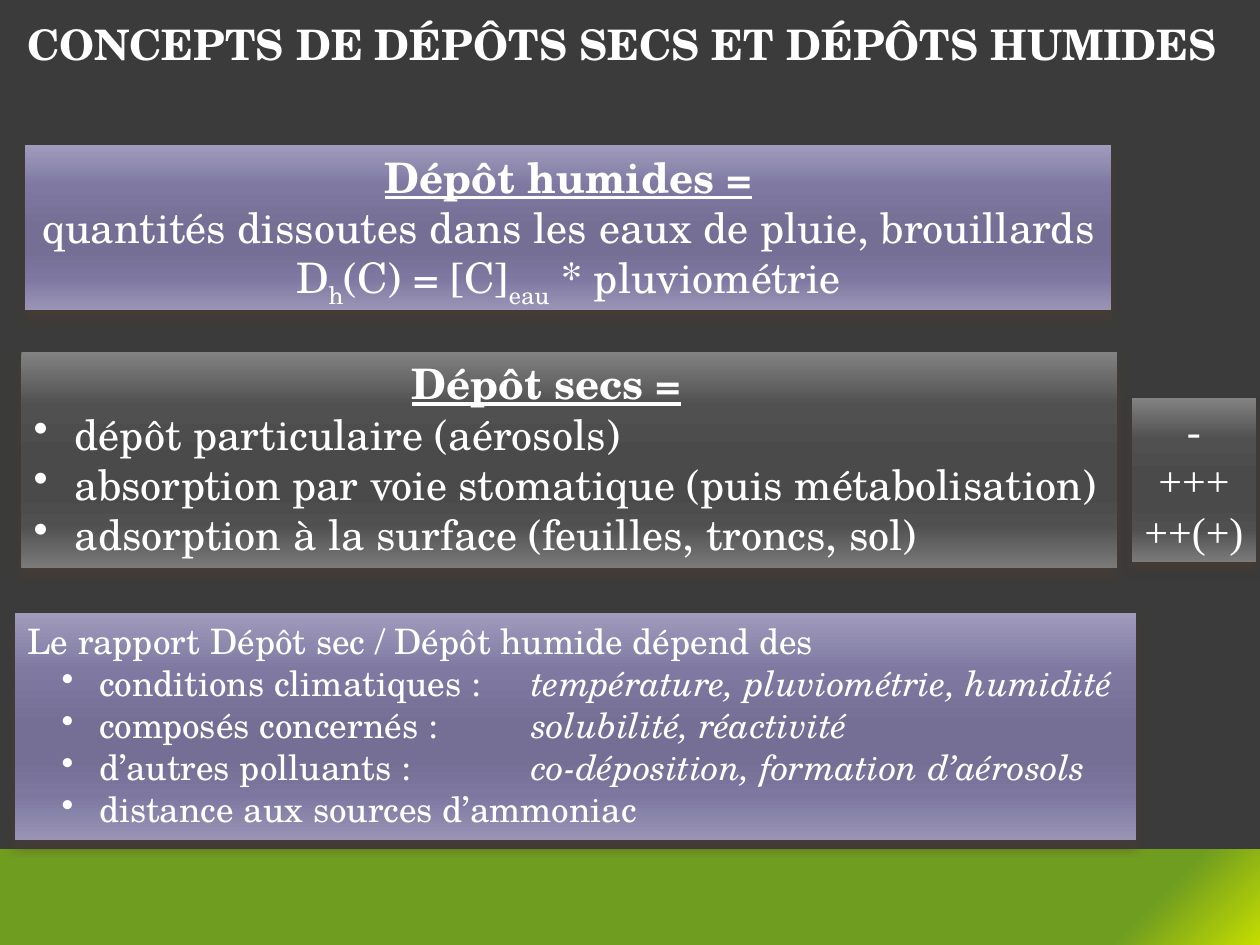
"""Build the slide on dry and wet deposition."""
from dataclasses import dataclass, field

from lxml.etree import SubElement, fromstring
from pptx import Presentation
from pptx.dml.color import RGBColor as RGB
from pptx.enum.shapes import MSO_SHAPE as SHAPE
from pptx.enum.text import MSO_ANCHOR as ANCHOR, PP_ALIGN as ALIGN
from pptx.oxml.ns import nsdecls, qn
from pptx.util import Pt

Stops = tuple[tuple[int, str], ...]
Box = tuple[float, float, float, float]


@dataclass(frozen=True)
class Theme:
    background: str = "3B3B3B"
    text: str = "FFFFFF"
    shadow: str = "4E3B30"
    band: Stops = ((0, "C5DD01"), (11, "6F9D20"), (100, "6F9D20"))
    violet: Stops = ((0, "A09BBC"), (25, "7F79A2"), (50, "756F95"),
                     (65, "756F95"), (80, "7E78A1"), (100, "9994B6"))
    grey: Stops = ((0, "828282"), (25, "505050"), (50, "4A4A4A"),
                   (65, "4A4A4A"), (80, "505050"), (100, "7A7A7A"))
    font: str = "TeX Gyre Schola"
    sign_font: str = "Times New Roman"
    large: float = 24
    small: float = 20


THEME = Theme()
LINEAR = '<a:lin ang="5400000" scaled="0"/>'
CORNER = '<a:path path="circle"><a:fillToRect l="100000" t="100000"/></a:path>'


@dataclass(frozen=True)
class Span:
    text: str
    style: dict = field(default_factory=dict)


@dataclass(frozen=True)
class Line:
    spans: tuple[Span, ...]
    margin: float = 0
    hanging: float = 0
    tab: float = 0


@dataclass(frozen=True)
class Panel:
    box: Box
    stops: Stops
    lines: tuple[Line, ...]
    size: float = THEME.large
    font: str = THEME.font
    centred: bool = False


def plain(text: str, **layout: float) -> Line:
    return Line((Span(text),), **layout)


def heading(text: str, margin: float = 0) -> Line:
    return Line((Span(text, {"bold": True, "underline": True}),), margin)


def item(text: str) -> Line:
    return plain(text, margin=23.5, hanging=23.5)


def factor(label: str, detail: str = "") -> Line:
    spans = (Span(label),)
    if detail:
        spans = (Span(label + "\t"), Span(detail, {"italic": True}))
    return Line(spans, margin=41, hanging=21.5, tab=288)


SUB = {"baseline": -25}
PANELS = (
    Panel((14.4, 82.8, 620.6, 94.3), THEME.violet, (
        heading("Dépôt humides ="),
        plain("quantités dissoutes dans les eaux de pluie, brouillards"),
        Line((Span("D"), Span("h", SUB), Span("(C) = [C]"),
              Span("eau", SUB), Span(" * pluviométrie"))),
    ), centred=True),
    Panel((12.2, 200.9, 626.4, 123.8), THEME.grey, (
        heading("Dépôt secs =", margin=216),
        item("dépôt particulaire (aérosols)"),
        item("absorption par voie stomatique (puis métabolisation)"),
        item("adsorption à la surface (feuilles, troncs, sol)"),
    )),
    Panel((646.6, 227.5, 71.3, 93.6), THEME.grey,
          tuple(plain(sign) for sign in ("-", "+++", "++(+)")),
          font=THEME.sign_font, centred=True),
    Panel((8.6, 350.6, 640.8, 129.6), THEME.violet, (
        plain("Le rapport Dépôt sec / Dépôt humide dépend des"),
        factor("conditions climatiques :", "température, pluviométrie, humidité"),
        factor("composés concernés :", "solubilité, réactivité"),
        factor("d’autres polluants :", "co-déposition, formation d’aérosols"),
        factor("distance aux sources d’ammoniac"),
    ), size=THEME.small),
)


def add_text(p, text: str, *, size: float = THEME.large, font: str = THEME.font,
             bold: bool = False, italic: bool = False, underline: bool = False,
             baseline: int = 0) -> None:
    r = p.add_run()
    r.text = text
    f = r.font
    f.size, f.name = Pt(size), font
    f.bold, f.italic, f.underline = bold, italic, underline
    f.color.rgb = RGB.from_string(THEME.text)
    if baseline:
        r._r.get_or_add_rPr().set("baseline", str(baseline * 1000))


def set_layout(p, line: Line) -> None:
    pPr = p._p.get_or_add_pPr()
    pPr.set("marL", str(Pt(line.margin)))
    pPr.set("indent", str(-Pt(line.hanging)))
    if line.hanging:
        SubElement(pPr, qn("a:buChar"), char="•")
    if line.tab:
        tabs = SubElement(pPr, qn("a:tabLst"))
        SubElement(tabs, qn("a:tab"), pos=str(Pt(line.tab)), algn="l")


def add_block(s, box: Box, stops: Stops, direction: str):
    sp = s.shapes.add_shape(SHAPE.RECTANGLE, *map(Pt, box))
    colours = "".join(f'<a:gs pos="{pos * 1000}"><a:srgbClr val="{rgb}"/></a:gs>'
                      for pos, rgb in stops)
    sp._element.spPr.insert(2, fromstring(
        f'<a:gradFill {nsdecls("a")} rotWithShape="1">'
        f'<a:gsLst>{colours}</a:gsLst>{direction}</a:gradFill>'))
    sp.line.fill.background()
    sp.shadow.inherit = False
    return sp


def add_shadow(sp) -> None:
    effects = sp._element.spPr.find(qn("a:effectLst"))
    shadow = SubElement(effects, qn("a:outerShdw"), blurRad=str(Pt(6)),
                        dist=str(Pt(4)), dir="5400000", rotWithShape="0")
    colour = SubElement(shadow, qn("a:srgbClr"), val=THEME.shadow)
    SubElement(colour, qn("a:alpha"), val="60000")


def add_panel(s, panel: Panel) -> None:
    sp = add_block(s, panel.box, panel.stops, LINEAR)
    add_shadow(sp)
    tf = sp.text_frame
    tf.word_wrap = not panel.centred
    tf.vertical_anchor = ANCHOR.TOP
    for i, line in enumerate(panel.lines):
        p = tf.add_paragraph() if i else tf.paragraphs[0]
        p.alignment = ALIGN.CENTER if panel.centred else ALIGN.LEFT
        set_layout(p, line)
        for span in line.spans:
            add_text(p, span.text, size=panel.size, font=panel.font, **span.style)


def add_title(s, text: str) -> None:
    tf = s.shapes.add_textbox(*map(Pt, (8.6, 7.2, 701.3, 36))).text_frame
    tf.word_wrap = True
    add_text(tf.paragraphs[0], text, bold=True)


def main() -> None:
    prs = Presentation()
    prs.slide_width, prs.slide_height = Pt(720), Pt(540)
    s = prs.slides.add_slide(prs.slide_layouts[6])
    s.background.fill.solid()
    s.background.fill.fore_color.rgb = RGB.from_string(THEME.background)
    add_block(s, (0, 485.3, 720, 54.7), THEME.band, CORNER)
    for panel in PANELS:
        add_panel(s, panel)
    add_title(s, "CONCEPTS DE DÉPÔTS SECS ET DÉPÔTS HUMIDES")
    prs.save("out.pptx")


if __name__ == "__main__":
    main()
